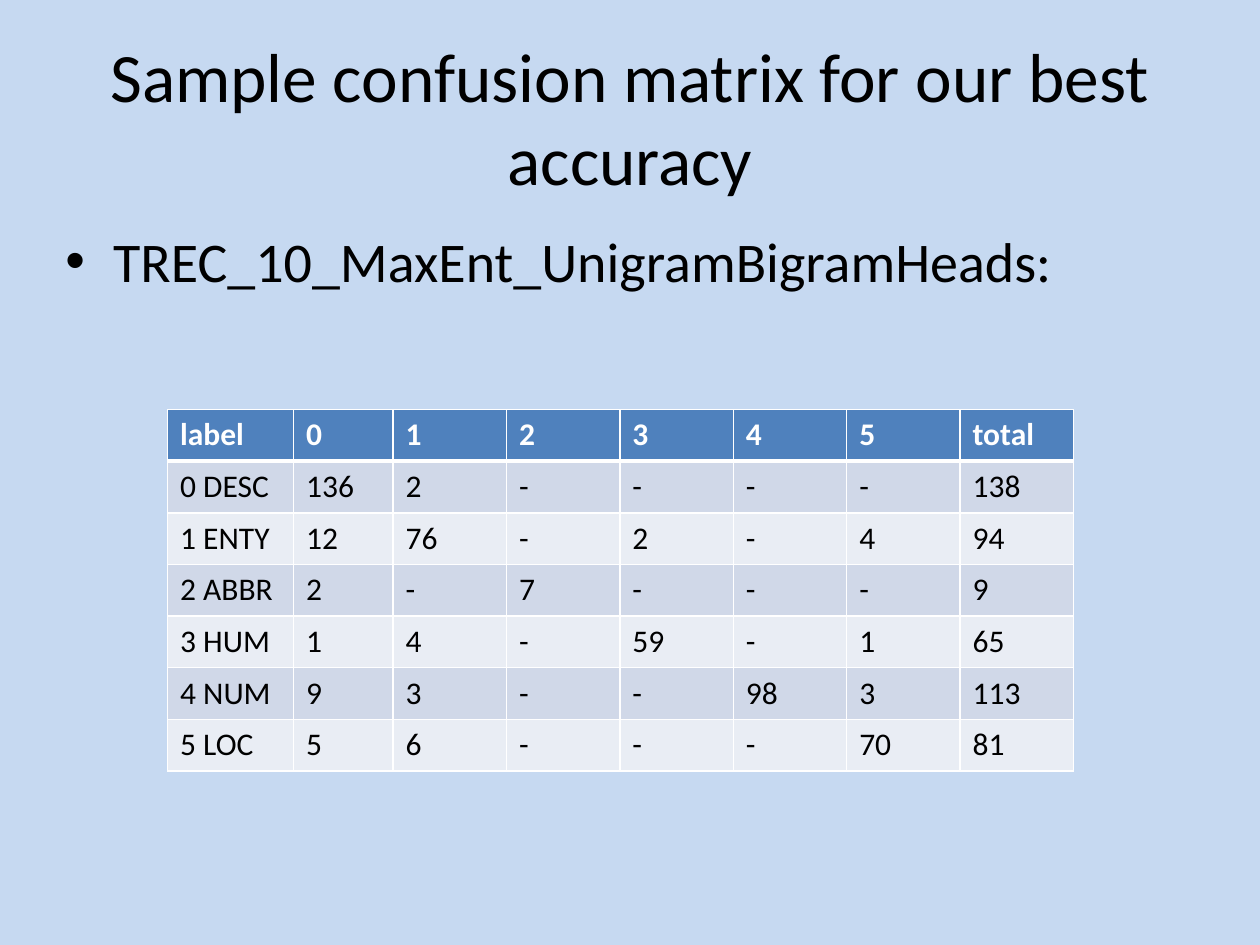
from lxml import etree
from pptx import Presentation
from pptx.dml.color import RGBColor
from pptx.enum.text import MSO_ANCHOR, PP_ALIGN
from pptx.oxml.ns import qn
from pptx.util import Inches, Pt

CENTER, LEFT = PP_ALIGN.CENTER, PP_ALIGN.LEFT
MIDDLE, TOP = MSO_ANCHOR.MIDDLE, MSO_ANCHOR.TOP

BACKGROUND = RGBColor(0xC6, 0xD9, 0xF1)
BLACK = RGBColor(0, 0, 0)
WHITE = RGBColor(0xFF, 0xFF, 0xFF)
HEADER_FILL = RGBColor(0x4F, 0x81, 0xBD)
BAND_FILLS = (RGBColor(0xD0, 0xD8, 0xE8), RGBColor(0xE9, 0xED, 0xF4))
FONT = "Calibri"

TITLE = "Sample confusion matrix for our best accuracy"
EXPERIMENT = "TREC_10_MaxEnt_UnigramBigramHeads:"
MATRIX = [
    ("label", "0", "1", "2", "3", "4", "5", "total"),
    ("0 DESC", "136", "2", "-", "-", "-", "-", "138"),
    ("1 ENTY", "12", "76", "-", "2", "-", "4", "94"),
    ("2 ABBR", "2", "-", "7", "-", "-", "-", "9"),
    ("3 HUM", "1", "4", "-", "59", "-", "1", "65"),
    ("4 NUM", "9", "3", "-", "-", "98", "3", "113"),
    ("5 LOC", "5", "6", "-", "-", "-", "70", "81"),
]
COLUMN_WIDTHS = [1, 0.79] + [0.9] * 6
ROW_HEIGHT = 0.41


def format_text(paragraph, size, color=BLACK, bold=False):
    for run in paragraph.runs:
        run.font.name = FONT
        run.font.size = Pt(size)
        run.font.bold = bold
        run.font.color.rgb = color


def add_text(slide, box, text, size, alignment, anchor):
    shape = slide.shapes.add_textbox(*map(Inches, box))
    text_frame = shape.text_frame
    text_frame.word_wrap = True
    text_frame.vertical_anchor = anchor
    text_frame.text = text
    paragraph = text_frame.paragraphs[0]
    paragraph.alignment = alignment
    format_text(paragraph, size)
    return paragraph


def add_bullet(paragraph, indent):
    properties = paragraph._p.get_or_add_pPr()
    properties.set("marL", str(Inches(indent)))
    properties.set("indent", str(-Inches(indent)))
    etree.SubElement(properties, qn("a:buFont"), typeface="Arial")
    etree.SubElement(properties, qn("a:buChar"), char="•")


def add_borders(cell, widths):
    """Draw white cell borders; widths maps each side (L, R, T, B) to points."""
    properties = cell._tc.get_or_add_tcPr()
    for side, width in widths.items():
        line = etree.SubElement(properties, qn(f"a:ln{side}"), w=str(Pt(width)))
        fill = etree.SubElement(line, qn("a:solidFill"))
        etree.SubElement(fill, qn("a:srgbClr"), val=str(WHITE))


def add_matrix(slide, left, top):
    size = (sum(COLUMN_WIDTHS), ROW_HEIGHT * len(MATRIX))
    table = slide.shapes.add_table(
        len(MATRIX), len(COLUMN_WIDTHS), *map(Inches, (left, top, *size))
    ).table
    for column, width in zip(table.columns, COLUMN_WIDTHS):
        column.width = Inches(width)
    for row_index, values in enumerate(MATRIX):
        table.rows[row_index].height = Inches(ROW_HEIGHT)
        is_header = row_index == 0
        fill = HEADER_FILL if is_header else BAND_FILLS[(row_index - 1) % 2]
        widths = {
            "L": 1,
            "R": 1,
            "T": 3 if row_index == 1 else 1,
            "B": 3 if is_header else 1,
        }
        for column_index, value in enumerate(values):
            cell = table.cell(row_index, column_index)
            cell.text = value
            format_text(cell.text_frame.paragraphs[0], 18,
                        WHITE if is_header else BLACK, is_header)
            add_borders(cell, widths)
            cell.fill.solid()
            cell.fill.fore_color.rgb = fill


def main():
    presentation = Presentation()
    presentation.slide_width = Inches(10)
    presentation.slide_height = Inches(7.5)
    slide = presentation.slides.add_slide(presentation.slide_layouts[6])
    slide.background.fill.solid()
    slide.background.fill.fore_color.rgb = BACKGROUND

    add_text(slide, (0.5, 0.3, 9, 1.25), TITLE, 39.6, CENTER, MIDDLE)
    experiment = add_text(slide, (0.42, 1.75, 9, 4.95), EXPERIMENT, 32, LEFT, TOP)
    experiment.space_before = Pt(6.4)
    add_bullet(experiment, 0.38)
    add_matrix(slide, 1.33, 3.25)

    presentation.save("out.pptx")


if __name__ == "__main__":
    main()
